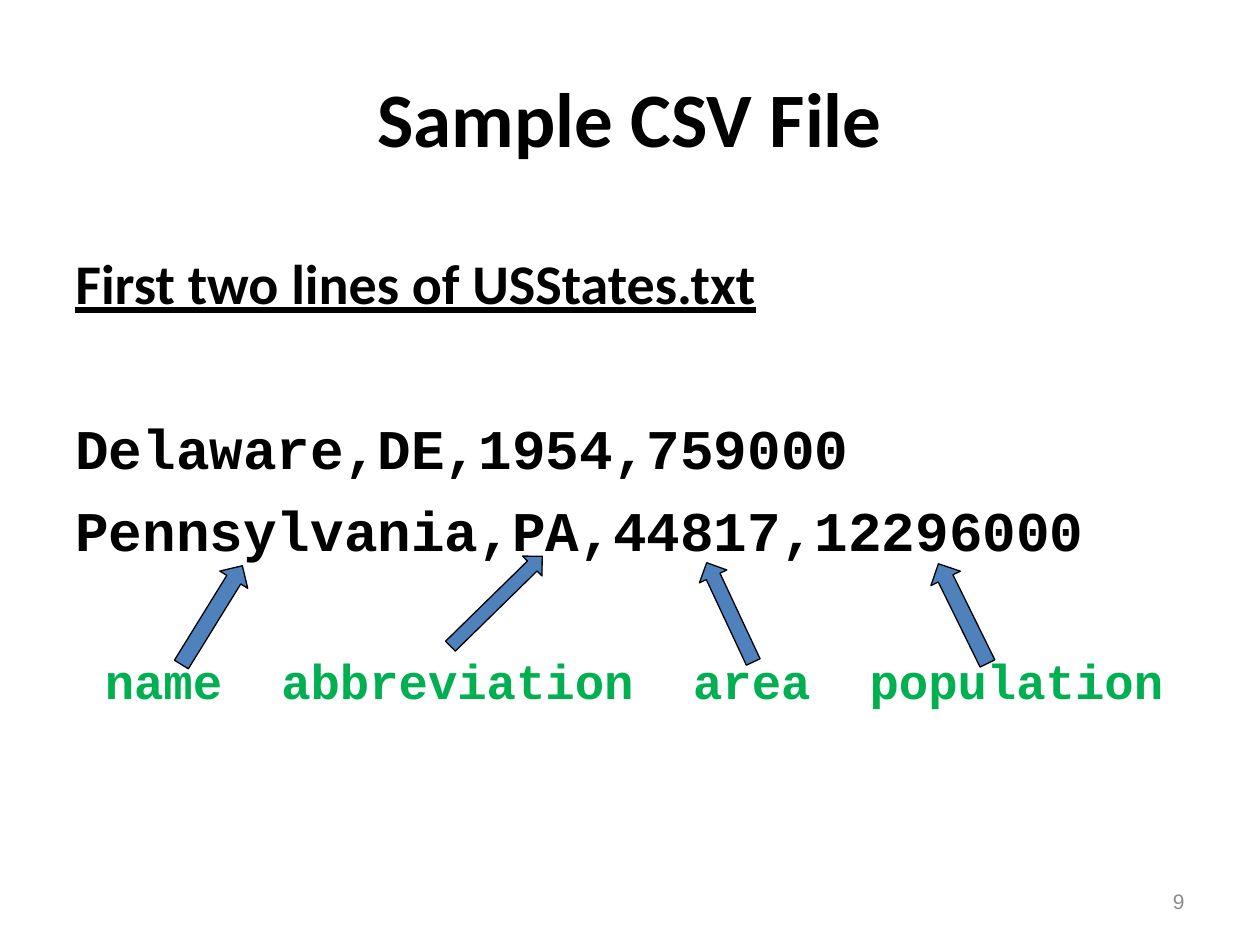
"""Build the slide that explains the fields of a sample CSV file."""
from lxml import etree
from pptx import Presentation
from pptx.dml.color import RGBColor
from pptx.enum.shapes import MSO_SHAPE
from pptx.enum.text import MSO_ANCHOR, PP_ALIGN
from pptx.oxml.ns import qn
from pptx.util import Cm, Pt

LEFT, CENTER, RIGHT = PP_ALIGN.LEFT, PP_ALIGN.CENTER, PP_ALIGN.RIGHT
TOP, MIDDLE = MSO_ANCHOR.TOP, MSO_ANCHOR.MIDDLE
LEFT_ARROW = MSO_SHAPE.LEFT_ARROW
COLORS = {"text": "000000", "field": "00B050", "number": "8C8C8C", "arrow": "4F81BD"}
HEADING, CODE = "Calibri", "Courier New"
CODE_CHAR = 0.593


def add_frame(left, top, width, height, anchor):
    frame = slide.shapes.add_textbox(Cm(left), Cm(top), Cm(width), Cm(height)).text_frame
    frame.word_wrap = True
    frame.vertical_anchor = anchor
    return frame


def write(paragraph, text, size, font, color="text", bold=True, align=LEFT, before=0):
    paragraph.alignment = align
    paragraph.space_before = Pt(before)
    run = paragraph.add_run()
    run.text = text
    run.font.size = Pt(size)
    run.font.name = font
    run.font.bold = bold
    run.font.color.rgb = RGBColor.from_string(COLORS[color])
    return run


presentation = Presentation()
presentation.slide_width = Cm(25.4)
presentation.slide_height = Cm(19.05)
slide = presentation.slides.add_slide(presentation.slide_layouts[6])

title = add_frame(1.27, 0.76, 22.86, 3.18, MIDDLE)
write(title.paragraphs[0], "Sample CSV File", 44, HEADING, align=CENTER)

body = add_frame(1.27, 4.88, 23.6, 11.53, TOP)
heading = write(body.paragraphs[0], "First two lines of USStates.txt", 32, HEADING)
heading.font.underline = True
for record, before in (("Delaware,DE,1954,759000", 56), ("Pennsylvania,PA,44817,12296000", 8.5)):
    write(body.add_paragraph(), record, 32, CODE, before=before)

fields = ["name", "abbreviation", "area", "population"]
field_line = body.add_paragraph()
write(field_line, "\t" + "\t".join(fields), 28, CODE, "field", before=50)
tab_stops = etree.SubElement(field_line._p.get_or_add_pPr(), qn("a:tabLst"))
column = 1
for field in fields:
    etree.SubElement(tab_stops, qn("a:tab"), pos=str(Cm(column * CODE_CHAR)), algn="l")
    column += len(field) + 2

page_number = add_frame(18.21, 17.65, 5.92, 1.02, MIDDLE)
write(page_number.paragraphs[0], "9", 12, "Arial", "number", bold=False, align=RIGHT)

for left, top, width, height, angle in (
    (3.1, 12.07, 2.34, 0.66, 121.7),
    (8.71, 11.84, 2.59, 0.56, 135.6),
    (13.61, 12.04, 2.21, 0.61, 64.9),
    (18.29, 12.04, 2.24, 0.66, 63.8),
):
    arrow = slide.shapes.add_shape(LEFT_ARROW, Cm(left), Cm(top), Cm(width), Cm(height))
    arrow.rotation = angle
    arrow.shadow.inherit = False
    arrow.fill.solid()
    arrow.fill.fore_color.rgb = RGBColor.from_string(COLORS["arrow"])
    arrow.line.color.rgb = RGBColor.from_string(COLORS["text"])
    arrow.line.width = Pt(0.75)

presentation.save("out.pptx")
